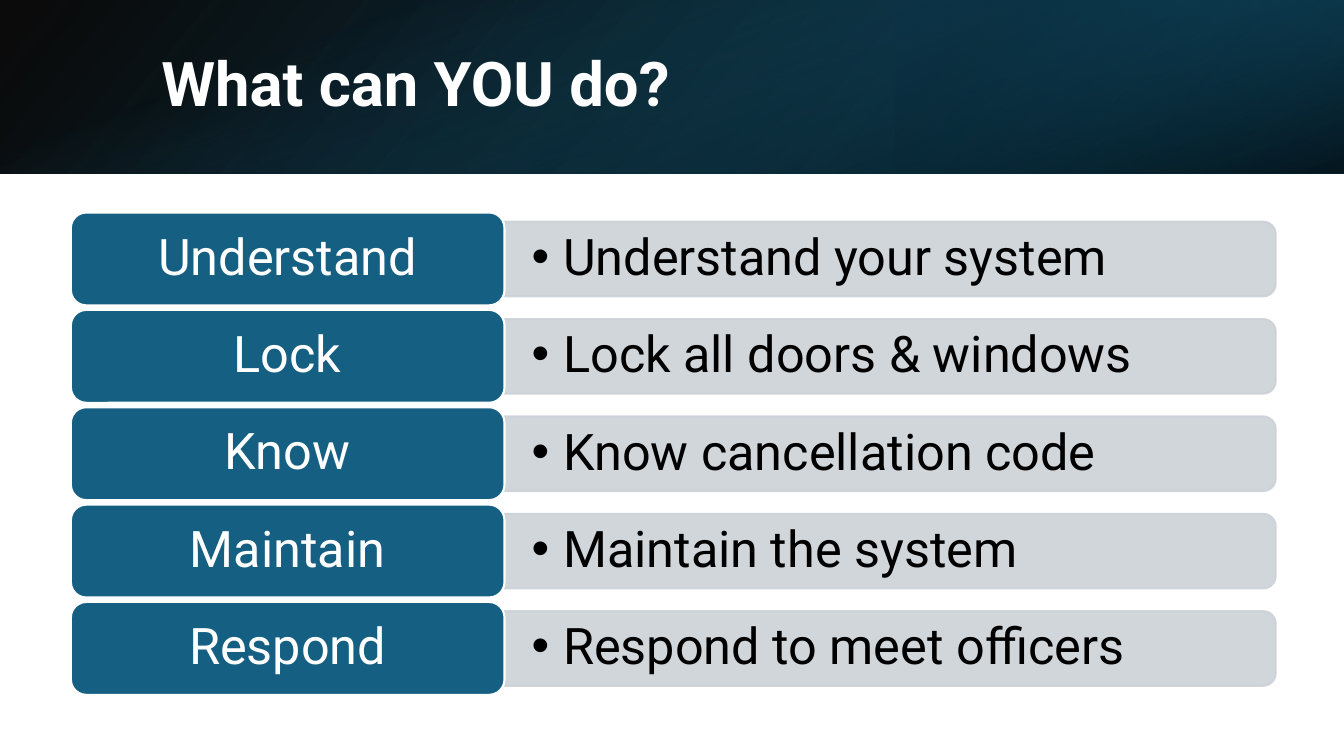
from lxml import etree
from pptx import Presentation
from pptx.dml.color import RGBColor
from pptx.enum import shapes, text
from pptx.oxml import parse_xml
from pptx.oxml import ns
from pptx.util import Pt

COLORS = {"white": "FFFFFF", "black": "000000", "teal": "156082", "deep": "104862",
          "navy": "0B3041", "grey": "CCD2D8"}
FONT = "Roboto"
BAND_HEIGHT = 123.8
ROW_TOP, ROW_PITCH = 185, 69.55
ROWS = [
    ("Understand", "Understand your system"),
    ("Lock", "Lock all doors & windows"),
    ("Know", "Know cancellation code"),
    ("Maintain", "Maintain the system"),
    ("Respond", "Respond to meet officers"),
]


def rgb(name):
    return RGBColor.from_string(COLORS[name])


def add_box(s, kind, box, rotation=0):
    sp = s.shapes.add_shape(kind, *[Pt(v) for v in box])
    sp.shadow.inherit = False
    sp.rotation = rotation
    return sp


def paint(sp, fill, line, opacity=100):
    """Give a solid fill and a 1.5 pt outline of the same opacity."""
    sp.fill.solid()
    sp.fill.fore_color.rgb = rgb(fill)
    sp.line.color.rgb = rgb(line)
    sp.line.width = Pt(1.5)
    if opacity < 100:
        for color in sp.element.spPr.iter(ns.qn("a:srgbClr")):
            etree.SubElement(color, ns.qn("a:alpha"), val=str(opacity * 1000))


def add_gradient(s, box, stops, angle, rotation=0, flip=False):
    """Add a borderless rectangle; stops are (position, color, opacity) in percent."""
    sp = add_box(s, shapes.MSO_SHAPE.RECTANGLE, box, rotation)
    sp.line.fill.background()
    sp.fill.background()
    if flip:
        sp.element.spPr.find(ns.qn("a:xfrm")).set("flipH", "1")
    stop_xml = "".join(
        f'<a:gs pos="{pos * 1000}"><a:srgbClr val="{COLORS[color]}">'
        f'<a:alpha val="{opacity * 1000}"/></a:srgbClr></a:gs>'
        for pos, color, opacity in stops)
    gradient = parse_xml(
        f'<a:gradFill {ns.nsdecls("a")} rotWithShape="1"><a:gsLst>{stop_xml}</a:gsLst>'
        f'<a:lin ang="{angle * 60000}" scaled="0"/></a:gradFill>')
    sp.element.spPr.replace(sp.element.spPr.find(ns.qn("a:noFill")), gradient)


def write(sp, words, size, color, align, margins, bold=False):
    tf = sp.text_frame
    frame = {"word_wrap": True, "auto_size": text.MSO_AUTO_SIZE.NONE,
             "vertical_anchor": text.MSO_ANCHOR.MIDDLE,
             "margin_left": Pt(margins[0]), "margin_right": Pt(margins[0]),
             "margin_top": Pt(margins[1]), "margin_bottom": Pt(margins[1])}
    for name, value in frame.items():
        setattr(tf, name, value)
    p = tf.paragraphs[0]
    p.alignment = align
    p.line_spacing = 0.9
    r = p.add_run()
    r.text = words
    for name, value in {"name": FONT, "size": Pt(size), "bold": bold}.items():
        setattr(r.font, name, value)
    r.font.color.rgb = rgb(color)
    return p


def add_bullet(p, indent):
    pPr = p._p.get_or_add_pPr()
    pPr.set("marL", str(Pt(indent)))
    pPr.set("indent", str(-Pt(indent)))
    etree.SubElement(pPr, ns.qn("a:buFont"), typeface="Arial")
    etree.SubElement(pPr, ns.qn("a:buChar"), char="•")


def add_band(s):
    add_gradient(s, (0, 0, 960, BAND_HEIGHT),
                 [(0, "black", 96), (100, "deep", 100)], 140, flip=True)
    add_gradient(s, (640, 0, 320, BAND_HEIGHT),
                 [(19, "navy", 68), (100, "teal", 79)], 320, rotation=180, flip=True)
    add_gradient(s, (480 - BAND_HEIGHT / 2, BAND_HEIGHT / 2 - 480, BAND_HEIGHT, 960),
                 [(23, "teal", 0), (99, "black", 74)], 340, rotation=90)


def add_title(s, words):
    title = s.shapes.title
    box = {"left": 108, "top": 27.4, "width": 790.6, "height": 69.1}
    for name, value in box.items():
        setattr(title, name, Pt(value))
    write(title, words, 44, "white", text.PP_ALIGN.LEFT, (7.2, 3.6), bold=True)
    # The band is drawn first, so the title goes to the front.
    s.shapes._spTree.append(title.element)


def add_row(s, middle, label, advice):
    width, height = 550.8, 53.2
    left = 360.4
    bar = add_box(s, shapes.MSO_SHAPE.ROUND_2_SAME_RECTANGLE,
                  (left + (width - height) / 2, middle - width / 2, height, width), 90)
    paint(bar, "grey", "grey", opacity=90)
    note = s.shapes.add_textbox(Pt(left), Pt(middle - 24), Pt(548), Pt(48))
    p = write(note, advice, 36, "black", text.PP_ALIGN.LEFT, (19.4, 9.7))
    add_bullet(p, 22.5)

    pill = add_box(s, shapes.MSO_SHAPE.ROUNDED_RECTANGLE, (50.6, middle - 33.2, 309.8, 66.4))
    paint(pill, "teal", "white")
    write(pill, label, 36, "white", text.PP_ALIGN.CENTER, (10.8, 5.4))


def main():
    prs = Presentation()
    prs.slide_width, prs.slide_height = Pt(960), Pt(540)
    s = prs.slides.add_slide(prs.slide_layouts.get_by_name("Title Only"))
    add_band(s)
    add_title(s, "What can YOU do?")
    for i, (label, advice) in enumerate(ROWS):
        add_row(s, ROW_TOP + i * ROW_PITCH, label, advice)
    prs.save("out.pptx")


if __name__ == "__main__":
    main()
